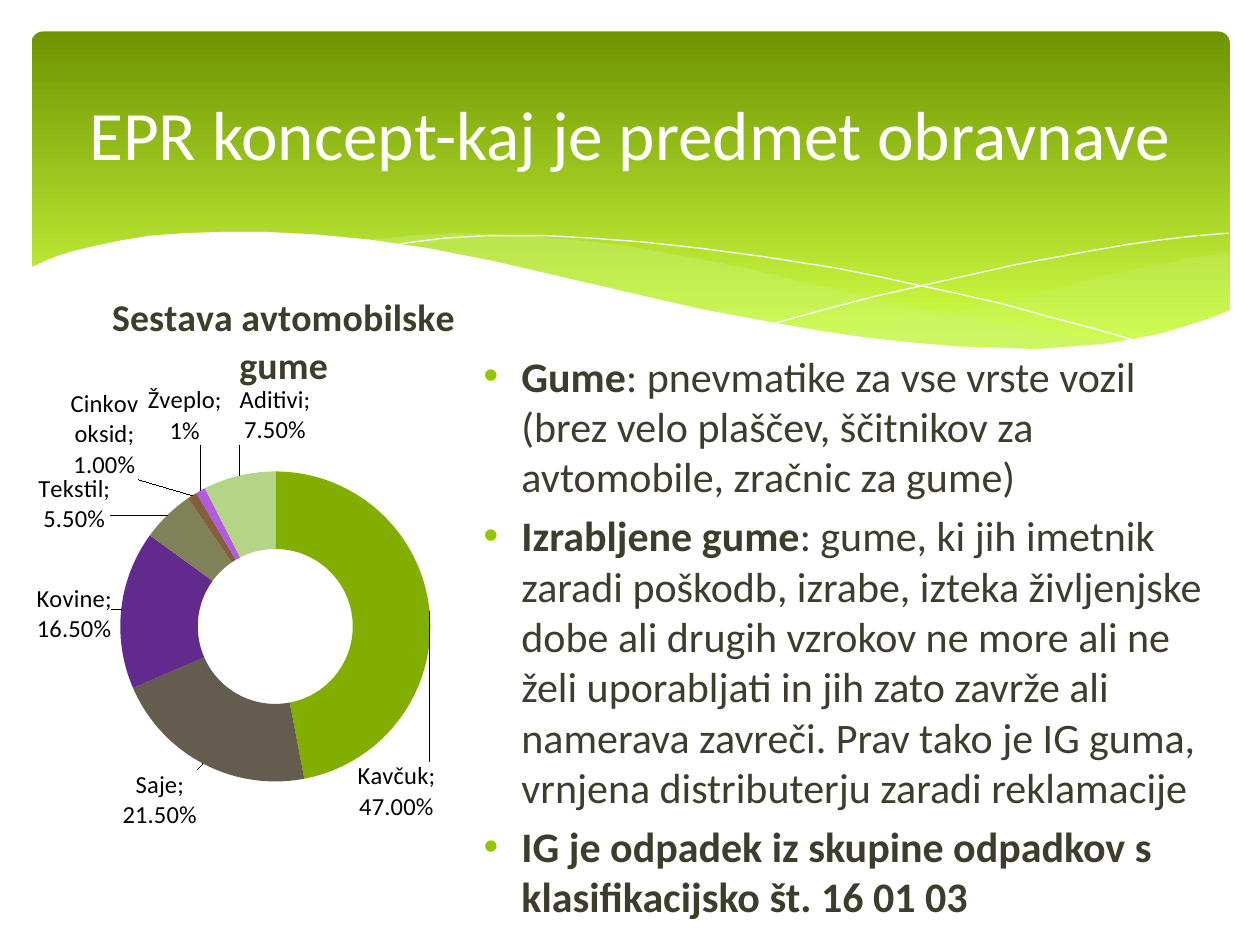
from math import cos, pi, sin
from lxml.etree import SubElement as Sub
from pptx import Presentation
from pptx.chart.data import CategoryChartData as Data
from pptx.dml.color import RGBColor as RGB
from pptx.enum.chart import XL_CHART_TYPE as Kind
from pptx.enum.shapes import MSO_SHAPE as Shape
from pptx.enum.text import MSO_ANCHOR as Anchor, PP_ALIGN as Align
from pptx.oxml import parse_xml
from pptx.oxml.ns import nsdecls, qn
from pptx.util import Inches, Pt

theme = dict(
    font="Calibri", dark="6F9400", lime="D0FF44", pale="CAF278",
    white="FFFFFF", text="3E3D2D", bullet="94C600", label="000000",
    title=39.6, body=24, head=21.6, small=14,
)
deck = Presentation()
deck.slide_width, deck.slide_height = Inches(10), Inches(7.5)
unit = deck.slide_width // 1000  # all lengths are thousandths of the slide's width
slide = deck.slides.add_slide(deck.slide_layouts[5])
shapes = slide.shapes


def style(font, size, color, bold=None):
    font.name, font.size, font.bold = theme["font"], Pt(size), bold
    font.color.rgb = RGB.from_string(theme[color])


def layout(x, y, more=""):
    return parse_xml(f'<c:layout {nsdecls("c")}><c:manualLayout>{more}'
                     f'<c:x val="{x:.3f}"/><c:y val="{y:.3f}"/></c:manualLayout></c:layout>')


# Green band with waves
band = shapes.add_shape(Shape.ROUNDED_RECTANGLE, 25 * unit, 25 * unit, 951 * unit, 270 * unit)
band.adjustments[0] = 0.034
band.shadow.inherit = False
band.line.fill.background()
band.fill.gradient()
band.fill.gradient_angle = 270
for stop, color, place in zip(band.fill.gradient_stops, ("dark", "lime"), (0, 0.9)):
    stop.color.rgb = RGB.from_string(theme[color])
    stop.position = place

# Each wave: fill color (none for an open white hairline), opacity, points
waves = [
    ("pale", 29, [
        (976, 200), (948, 204), (921, 210), (891, 216), (861, 223), (805, 237), (753, 248),
        (706, 257), (661, 265), (691, 269), (719, 272), (745, 275), (769, 277), (803, 278),
        (835, 277), (863, 275), (889, 272), (913, 267), (935, 262), (949, 257), (976, 247)]),
    ("pale", 40, [
        (893, 273), (866, 269), (837, 265), (807, 260), (775, 254), (741, 247), (706, 240),
        (668, 231), (629, 222), (598, 214), (569, 208), (541, 203), (514, 198), (489, 194),
        (442, 189), (399, 186), (361, 185), (328, 187), (286, 191), (323, 196), (362, 203),
        (404, 211), (449, 222), (491, 232), (530, 240), (566, 248), (601, 255), (634, 261),
        (665, 266), (695, 270), (722, 274), (748, 276), (773, 277), (807, 278), (848, 277),
        (876, 275)]),
    (None, 100, [
        (309, 195), (328, 192), (353, 189), (387, 187), (433, 187), (469, 189), (510, 192),
        (556, 197), (608, 204), (665, 213), (695, 219), (727, 226), (760, 233), (795, 241),
        (831, 251), (869, 261), (907, 272)]),
    (None, 100, [
        (613, 257), (653, 246), (695, 235), (748, 223), (806, 210), (866, 199), (895, 194),
        (924, 190), (951, 187), (975, 185)]),
    ("white", 100, [
        (977, 246), (959, 253), (940, 259), (920, 265), (899, 269), (875, 273), (850, 275),
        (823, 277), (793, 276), (761, 275), (726, 272), (688, 268), (648, 262), (603, 254),
        (555, 245), (503, 233), (447, 220), (391, 207), (340, 197), (292, 190), (250, 186),
        (211, 184), (177, 184), (146, 185), (119, 187), (95, 191), (76, 195), (59, 199),
        (46, 203), (36, 207), (23, 213), (23, 329), (977, 329)]),
]
for color, alpha, points in waves:
    pen = shapes.build_freeform(*points[0], scale=unit)
    pen.add_line_segments(points[1:], close=bool(color))
    form = pen.convert_to_shape()
    form.shadow.inherit = False
    if color:
        form.line.fill.background()
        form.fill.solid()
        form.fill.fore_color.rgb = RGB.from_string(theme[color])
        tint = form._element.spPr.find(qn("a:solidFill"))[0]
        Sub(tint, qn("a:alpha"), val=str(alpha * 1000))
    else:
        form.fill.background()
        form.line.color.rgb = RGB.from_string(theme["white"])
        form.line.width = Pt(0)

# Definitions
terms = [
    ("Gume", ": pnevmatike za vse vrste vozil (brez velo plaščev, ščitnikov za "
     "avtomobile, zračnic za gume)"),
    ("Izrabljene gume", ": gume, ki jih imetnik zaradi poškodb, izrabe, izteka življenjske "
     "dobe ali drugih vzrokov ne more ali ne želi uporabljati in jih zato zavrže ali "
     "namerava zavreči. Prav tako je IG guma, vrnjena distributerju zaradi reklamacije"),
    ("IG je odpadek iz skupine odpadkov s klasifikacijsko št. 16 01 03", ""),
]
frame = shapes.add_textbox(374 * unit, 273 * unit, 598 * unit, 477 * unit).text_frame
frame.word_wrap = True
for row, (term, rest) in enumerate(terms):
    para = frame.add_paragraph() if row else frame.paragraphs[0]
    props = para._p.get_or_add_pPr()
    props.set("marL", str(30 * unit))
    props.set("indent", str(-30 * unit))
    if row:
        para.space_before = Pt(0.2 * theme["body"])
    Sub(Sub(props, qn("a:buClr")), qn("a:srgbClr"), val=theme["bullet"])
    Sub(props, qn("a:buFont"), typeface="Arial")
    Sub(props, qn("a:buChar"), char="•")
    style(para.font, theme["body"], "text")
    for words, bold in ((term, True), (rest, False)):
        if words:
            run = para.add_run()
            run.text = words
            style(run.font, theme["body"], "text", bold)

# Title, in front of the band
title = shapes.title
title.left, title.top, title.width, title.height = (n * unit for n in (50, 37, 900, 137))
title.text_frame.text = "EPR koncept-kaj je predmet obravnave"
title.text_frame.vertical_anchor = Anchor.MIDDLE
para = title.text_frame.paragraphs[0]
para.alignment = Align.CENTER
style(para.font, theme["title"], "white")
shapes._spTree.append(title._element)

# Tyre make-up: name, share, color, label centre as shares of the chart
parts = [
    ("Kavčuk", 0.47, "82AE00", 0.72, 0.83),
    ("Saje", 0.215, "645C4F", 0.25, 0.84),
    ("Kovine", 0.165, "632A8D", 0.08, 0.55),
    ("Tekstil", 0.055, "7F8259", 0.08, 0.38),
    ("Cinkov oksid", 0.01, "845F3B", 0.14, 0.27),
    ("Žveplo", 0.01, "B45AE1", 0.3, 0.24),
    ("Aditivi", 0.075, "B4D488", 0.48, 0.24),
]
data = Data(number_format="0.00%")
data.categories = [part[0] for part in parts]
data.add_series("Sestava avtomobilske gume", [part[1] for part in parts])
chart = shapes.add_chart(Kind.DOUGHNUT, 28 * unit, 210 * unit, 397 * unit, 504 * unit, data).chart
style(chart.font, theme["small"], "label")
chart.has_legend = False
chart.chart_title.text_frame.text = "Sestava avtomobilske gume"
style(chart.chart_title.text_frame.paragraphs[0].font, theme["head"], "text", True)

edge = '<c:xMode val="edge"/><c:yMode val="edge"/>'
head = chart.chart_title._element
area = chart._chartSpace.chart.plotArea
for owner in (head, area):
    for old in owner.findall(qn("c:layout")):
        owner.remove(old)
head.find(qn("c:tx")).addnext(layout(0.14, 0.03, edge))
area.insert(0, layout(0.17, 0.23, '<c:layoutTarget val="inner"/>' + edge))
for side, size in (("w", 0.62), ("h", 0.68)):
    Sub(area[0][0], qn("c:" + side), val=str(size))

plot = chart.plots[0]
plot.vary_by_categories = True
plot._element.find(qn("c:holeSize")).set("val", "50")
form = '<c:numFmt formatCode="0.00%" sourceLinked="0"/>'
flags = "".join(f'<c:show{name} val="{on}"/>' for name, on in (
    ("LegendKey", 0), ("Val", 1), ("CatName", 1), ("SerName", 0), ("Percent", 0),
    ("BubbleSize", 0))) + "<c:separator>; </c:separator>"
labels = parse_xml(f'<c:dLbls {nsdecls("c")}>{form}{flags}<c:showLeaderLines val="1"/></c:dLbls>')
series = plot.series[0]
series._element.find(qn("c:cat")).addprevious(labels)
done = 0
for spot, (name, share, color, x, y) in enumerate(parts):
    point = series.points[spot]
    point.format.fill.solid()
    point.format.fill.fore_color.rgb = RGB.from_string(color)
    turn = 2 * pi * (done + share / 2)
    done += share
    label = parse_xml(f'<c:dLbl {nsdecls("c")}><c:idx val="{spot}"/>{form}{flags}</c:dLbl>')
    # A label's layout is its shift from the middle of its ring segment
    label.insert(1, layout(x - 0.48 - 0.23 * sin(turn), y - 0.57 + 0.18 * cos(turn)))
    labels.insert(spot, label)
    if name == "Žveplo":
        note = point.data_label.text_frame
        note.text = "Žveplo;\n1%"
        for para in note.paragraphs:
            style(para.runs[0].font, theme["small"], "label")

deck.save("out.pptx")
